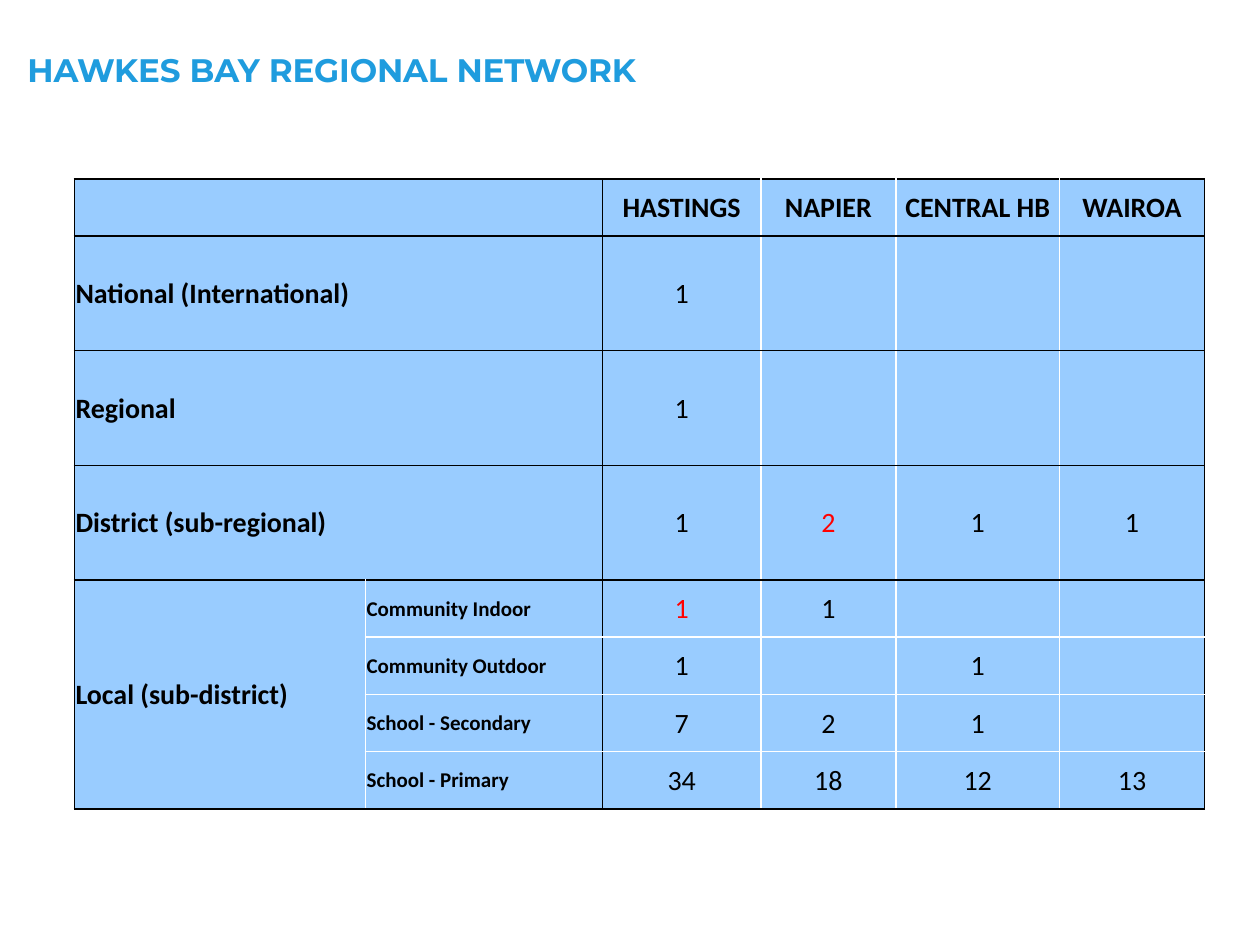
from dataclasses import dataclass

import lxml.etree
import pptx
import pptx.dml.color
import pptx.enum.text
import pptx.oxml.ns
import pptx.util

PAGE_WIDTH, PAGE_HEIGHT = 10, 7.5
BLACK, WHITE, RED = "000000", "FFFFFF", "FF0000"
PANEL, TITLE = "99CCFF", "1F9CDE"
COLUMN_WIDTHS = [2.31, 1.88, 1.26, 1.07, 1.3, 1.15]
ROW_UNITS = [1, 2, 2, 2, 1, 1, 1, 1]
ROW_UNIT = 5 / sum(ROW_UNITS)
FIRST_LOCAL_ROW = 4
COLUMN_LINES = [BLACK, WHITE, BLACK, WHITE, WHITE, WHITE, BLACK]
ROW_LINES = [BLACK] * 5 + [WHITE] * 3 + [BLACK]
RED_CELLS = {(3, 3), (4, 2)}


@dataclass
class Level:
    group: str
    kind: str
    values: list[str]


LEVELS = [
    Level("", "", ["HASTINGS", "NAPIER", "CENTRAL HB", "WAIROA"]),
    Level("National (International)", "", ["1", "", "", ""]),
    Level("Regional", "", ["1", "", "", ""]),
    Level("District (sub-regional)", "", ["1", "2", "1", "1"]),
    Level("Local (sub-district)", "Community Indoor", ["1", "1", "", ""]),
    Level("", "Community Outdoor", ["1", "", "1", ""]),
    Level("", "School - Secondary", ["7", "2", "1", ""]),
    Level("", "School - Primary", ["34", "18", "12", "13"]),
]


def color(code: str) -> pptx.dml.color.RGBColor:
    return pptx.dml.color.RGBColor.from_string(code)


def add_span(para, text: str, size: float, face: str, code: str, bold: bool):
    span = para.add_run()
    span.text = text
    span.font.size = pptx.util.Pt(size)
    span.font.name = face
    span.font.bold = bold
    span.font.color.rgb = color(code)
    return span


def draw_title(page, text: str) -> None:
    box = page.shapes.add_textbox(
        *(pptx.util.Inches(length) for length in (0.12, 0.15, 8.03, 0.92))
    )
    box.text_frame.word_wrap = True
    box.text_frame.vertical_anchor = pptx.enum.text.MSO_ANCHOR.MIDDLE
    span = add_span(box.text_frame.paragraphs[0], text, 32, "Montserrat", TITLE, True)
    span.font._element.set("baseline", "30000")


def draw_borders(cell, row: int, column: int) -> None:
    sides = {
        "a:lnL": COLUMN_LINES[column],
        "a:lnR": COLUMN_LINES[column + cell.span_width],
        "a:lnT": ROW_LINES[row],
        "a:lnB": ROW_LINES[row + cell.span_height],
    }
    properties = cell._tc.get_or_add_tcPr()
    name = pptx.oxml.ns.qn
    for position, (side, code) in enumerate(sides.items()):
        line = lxml.etree.Element(name(side), w=str(pptx.util.Pt(1)))
        fill = lxml.etree.SubElement(line, name("a:solidFill"))
        lxml.etree.SubElement(fill, name("a:srgbClr"), val=code)
        properties.insert(position, line)


def draw_cell(cell, row: int, column: int, text: str) -> None:
    cell.margin_left = cell.margin_right = cell.margin_top = pptx.util.Inches(0.01)
    cell.margin_bottom = 0
    cell.vertical_anchor = pptx.enum.text.MSO_ANCHOR.MIDDLE
    cell.fill.solid()
    cell.fill.fore_color.rgb = color(PANEL)
    draw_borders(cell, row, column)
    if not text:
        return
    para = cell.text_frame.paragraphs[0]
    align = pptx.enum.text.PP_ALIGN
    para.alignment = align.CENTER if column > 1 else align.LEFT
    code = RED if (row, column) in RED_CELLS else BLACK
    add_span(para, text, 12 if column == 1 else 16, "Calibri", code, row == 0 or column < 2)


def draw_network(page, levels: list[Level]) -> None:
    frame = page.shapes.add_table(
        len(levels),
        len(COLUMN_WIDTHS),
        pptx.util.Inches(0.59),
        pptx.util.Inches(1.42),
        pptx.util.Inches(sum(COLUMN_WIDTHS)),
        pptx.util.Inches(ROW_UNIT * sum(ROW_UNITS)),
    )
    table = frame.table
    table.first_row = table.horz_banding = False
    for column, width in zip(table.columns, COLUMN_WIDTHS):
        column.width = pptx.util.Inches(width)
    for row, units in zip(table.rows, ROW_UNITS):
        row.height = pptx.util.Inches(ROW_UNIT * units)
    for row in range(FIRST_LOCAL_ROW):
        table.cell(row, 0).merge(table.cell(row, 1))
    table.cell(FIRST_LOCAL_ROW, 0).merge(table.cell(len(levels) - 1, 0))
    for row, level in enumerate(levels):
        for column, text in enumerate([level.group, level.kind, *level.values]):
            draw_cell(table.cell(row, column), row, column, text)


def main() -> None:
    deck = pptx.Presentation()
    deck.slide_width = pptx.util.Inches(PAGE_WIDTH)
    deck.slide_height = pptx.util.Inches(PAGE_HEIGHT)
    page = deck.slides.add_slide(deck.slide_layouts[6])
    draw_title(page, "HAWKES BAY REGIONAL NETWORK")
    draw_network(page, LEVELS)
    deck.save("out.pptx")


if __name__ == "__main__":
    main()
